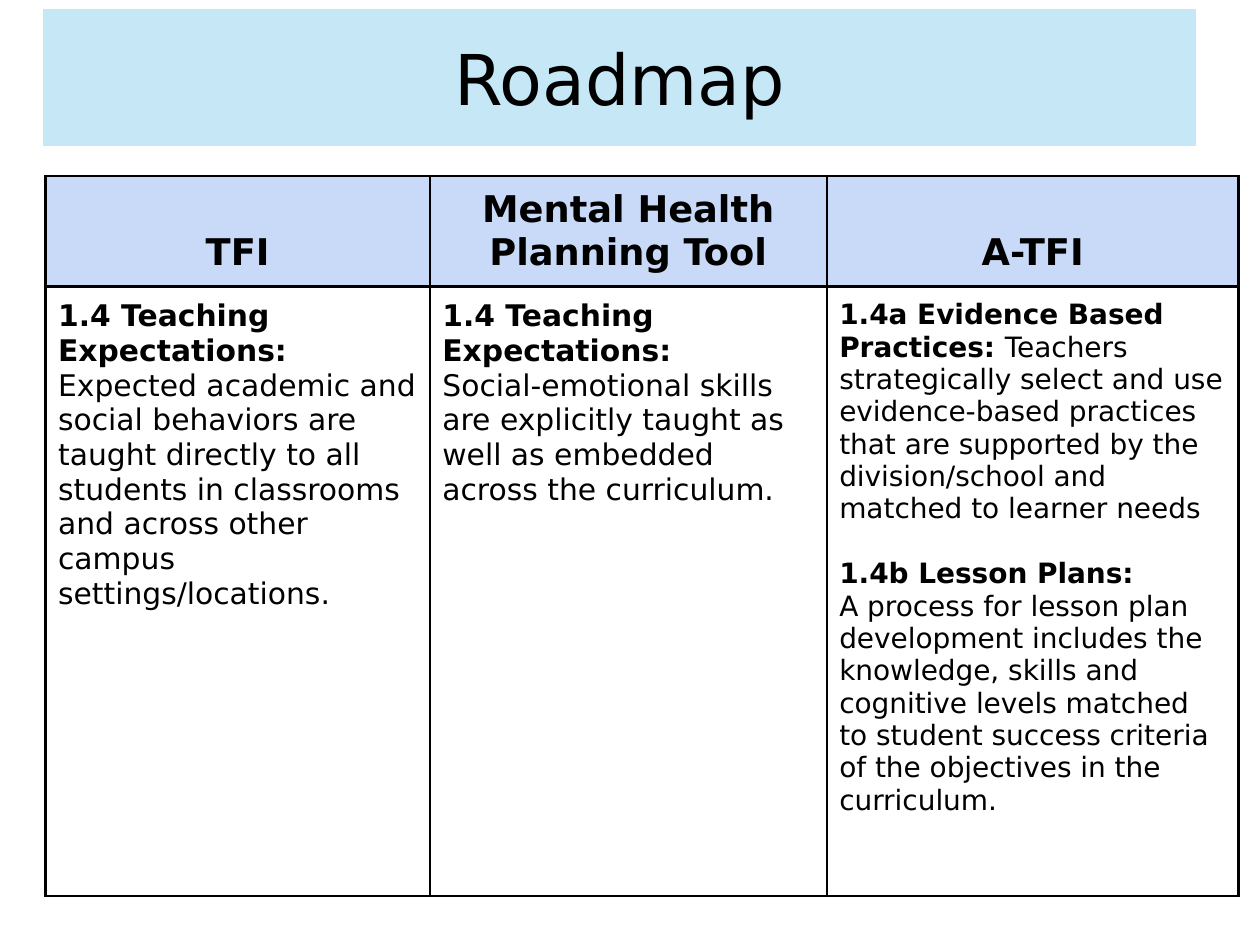
"""Build the Roadmap slide: a title band above a three-column comparison table."""
from dataclasses import dataclass

from lxml.etree import SubElement
from pptx import Presentation
from pptx.dml.color import RGBColor
from pptx.enum.text import MSO_ANCHOR as Anchor, PP_ALIGN as Align
from pptx.oxml.ns import qn
from pptx.util import Pt

FONT = "DejaVu Sans"
BLACK, WHITE = "000000", "FFFFFF"
BAND, HEADER = "A9DCF2", "C9DAF8"
HEADER_SIZE = 21
ROW_HEIGHTS = (63, 348.5)


@dataclass
class Passage:
    runs: list[tuple[str, bool]]
    space_before: float = 0


@dataclass
class Tool:
    heading: str
    width: float
    size: float
    passages: list[Passage]


TOOLS = [
    Tool("TFI", 219.6, 17, [
        Passage([("1.4 Teaching Expectations: ", True),
                 ("Expected academic and social behaviors are taught directly to all "
                  "students in classrooms and across other campus settings/locations.", False)]),
    ]),
    Tool("Mental Health Planning Tool", 226.8, 17, [
        Passage([("1.4 Teaching Expectations:", True)]),
        Passage([("Social-emotional skills are explicitly taught as well as embedded "
                  "across the curriculum.", False)]),
    ]),
    Tool("A-TFI", 235.4, 16, [
        Passage([("1.4a Evidence Based Practices: ", True),
                 ("Teachers strategically select and use evidence-based practices that are "
                  "supported by the division/school and matched to learner needs", False)]),
        Passage([("1.4b Lesson Plans:", True)], space_before=18.6),
        Passage([("A process for lesson plan development includes the knowledge, skills and "
                  "cognitive levels matched to student success criteria of the objectives "
                  "in the curriculum.", False)]),
    ]),
]


def rgb(value: str) -> RGBColor:
    return RGBColor.from_string(value)


def set_font(font, size: float) -> None:
    font.name, font.size = FONT, Pt(size)
    font.color.rgb = rgb(BLACK)


def draw_title(title, text: str) -> None:
    title.left, title.top, title.width, title.height = Pt(24), Pt(5), Pt(660), Pt(79)
    title.fill.solid()
    title.fill.fore_color.rgb = rgb(BAND)
    color = title.fill._xPr.find(qn("a:solidFill"))[0]
    SubElement(color, qn("a:alpha"), val="67000")
    title.line.color.rgb = rgb(WHITE)
    title.line.width = Pt(0.75)
    frame = title.text_frame
    frame.text = text
    frame.vertical_anchor = Anchor.MIDDLE
    frame.paragraphs[0].alignment = Align.CENTER
    set_font(frame.paragraphs[0].font, 40)


def frame_cell(cell) -> None:
    cell.margin_left = cell.margin_right = Pt(7.2)
    cell.margin_top = cell.margin_bottom = Pt(7.2)
    properties = cell._tc.get_or_add_tcPr()
    for side in ("lnL", "lnR", "lnT", "lnB"):
        border = SubElement(properties, qn(f"a:{side}"), w=str(Pt(1.5)))
        SubElement(SubElement(border, qn("a:solidFill")), qn("a:srgbClr"), val=BLACK)


def draw_heading(cell, heading: str) -> None:
    frame_cell(cell)
    cell.fill.solid()
    cell.fill.fore_color.rgb = rgb(HEADER)
    cell.vertical_anchor = Anchor.BOTTOM
    cell.text = heading
    paragraph = cell.text_frame.paragraphs[0]
    paragraph.alignment = Align.CENTER
    set_font(paragraph.font, HEADER_SIZE)
    paragraph.font.bold = True


def draw_passages(cell, tool: Tool) -> None:
    frame_cell(cell)
    cell.fill.background()
    frame = cell.text_frame
    for index, passage in enumerate(tool.passages):
        paragraph = frame.add_paragraph() if index else frame.paragraphs[0]
        set_font(paragraph.font, tool.size)
        if passage.space_before:
            paragraph.space_before = Pt(passage.space_before)
        for text, bold in passage.runs:
            run = paragraph.add_run()
            run.text = text
            run.font.bold = bold


def draw_table(slide, tools: list[Tool]) -> None:
    width = sum(tool.width for tool in tools)
    table = slide.shapes.add_table(len(ROW_HEIGHTS), len(tools), Pt(26), Pt(100.5),
                                   Pt(width), Pt(sum(ROW_HEIGHTS))).table
    table.first_row = table.horz_banding = False
    for row, height in zip(table.rows, ROW_HEIGHTS):
        row.height = Pt(height)
    for index, tool in enumerate(tools):
        table.columns[index].width = Pt(tool.width)
        draw_heading(table.cell(0, index), tool.heading)
        draw_passages(table.cell(1, index), tool)


def main() -> None:
    deck = Presentation()
    deck.slide_width, deck.slide_height = Pt(720), Pt(540)
    slide = deck.slides.add_slide(deck.slide_layouts[5])
    draw_table(slide, TOOLS)
    draw_title(slide.shapes.title, "Roadmap")
    deck.save("out.pptx")


if __name__ == "__main__":
    main()
